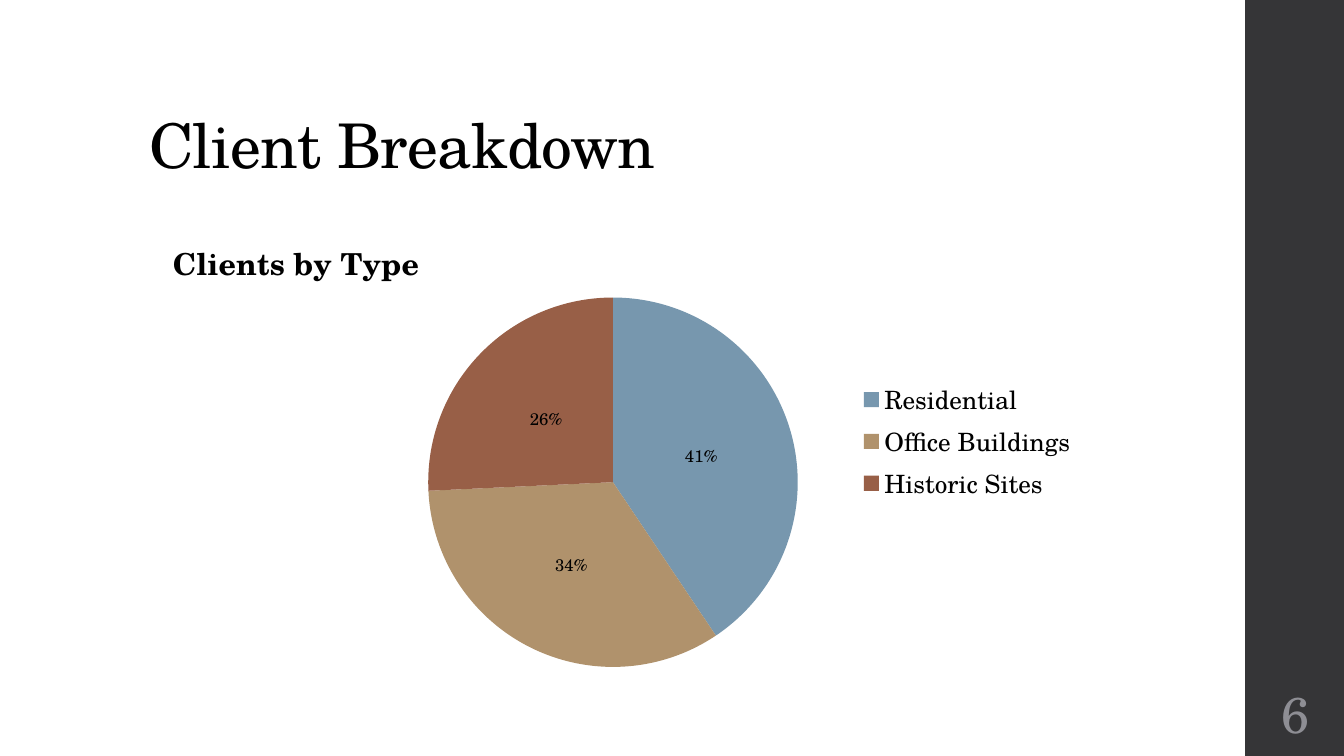
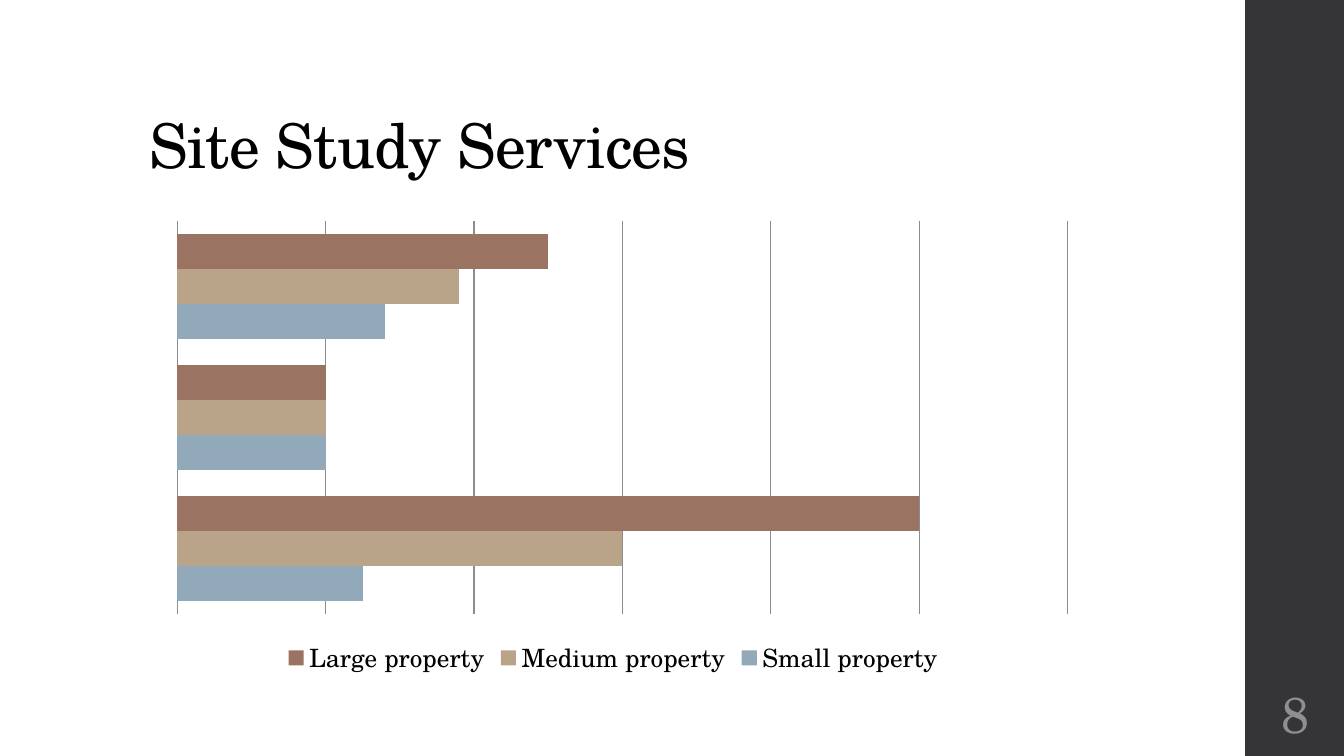
from lxml import etree
from pptx import Presentation
from pptx.chart.data import CategoryChartData
from pptx.dml.color import RGBColor
from pptx.enum.chart import XL_CHART_TYPE, XL_LABEL_POSITION, XL_LEGEND_POSITION
from pptx.enum.shapes import MSO_SHAPE
from pptx.enum.text import MSO_ANCHOR, PP_ALIGN
from pptx.oxml.ns import qn
from pptx.util import Inches, Pt

FONT = "TeX Gyre Schola"
BLACK = RGBColor(0x00, 0x00, 0x00)
BAND = RGBColor(0x35, 0x35, 0x37)
PAGE_GRAY = RGBColor(0x8E, 0x8E, 0x94)
GRID_GRAY = RGBColor(0x8C, 0x8C, 0x8C)
BLUE = RGBColor(0x77, 0x97, 0xAE)
TAN = RGBColor(0xB0, 0x92, 0x6C)
RUST = RGBColor(0x98, 0x5F, 0x47)
SOFT_BLUE = RGBColor(0x92, 0xA9, 0xB9)
SOFT_TAN = RGBColor(0xB9, 0xA4, 0x89)
SOFT_RUST = RGBColor(0x9B, 0x73, 0x62)

CONTENT_LEFT = 1.38
BAND_LEFT, BAND_WIDTH, SLIDE_HEIGHT = 12.35, 1, 7.5
PRICE_FORMAT = r"\$#,##0_);[Red]\(\$#,##0\)"


def style_font(font, size, color=BLACK, bold=False):
    font.name = FONT
    font.size = Pt(size)
    font.color.rgb = color
    font.bold = bold


def add_text(slide, text, box, size, color, anchor):
    """Add a one-line text box and return its frame, paragraph and run."""
    frame = slide.shapes.add_textbox(*map(Inches, box)).text_frame
    frame.word_wrap = True
    frame.vertical_anchor = anchor
    paragraph = frame.paragraphs[0]
    run = paragraph.add_run()
    run.text = text
    style_font(run.font, size, color)
    return frame, paragraph, run


def add_title(slide, text):
    box = (CONTENT_LEFT, 0.4, 10.6, 1.45)
    _, paragraph, run = add_text(slide, text, box, 44, BLACK, MSO_ANCHOR.BOTTOM)
    paragraph.line_spacing = 0.9
    run._r.get_or_add_rPr().set("spc", "-50")


def add_band(slide):
    band = slide.shapes.add_shape(
        MSO_SHAPE.RECTANGLE,
        Inches(BAND_LEFT), 0, Inches(BAND_WIDTH), Inches(SLIDE_HEIGHT))
    band.shadow.inherit = False
    band.fill.solid()
    band.fill.fore_color.rgb = BAND
    band.line.fill.background()


def add_page_number(slide, number):
    box = (BAND_LEFT, 6.75, BAND_WIDTH, 0.65)
    frame, paragraph, _ = add_text(
        slide, str(number), box, 36, PAGE_GRAY, MSO_ANCHOR.MIDDLE)
    frame.margin_left = frame.margin_right = Inches(0.05)
    frame.margin_top = frame.margin_bottom = Inches(0.05)
    paragraph.alignment = PP_ALIGN.CENTER


def add_content_slide(prs, title, number):
    slide = prs.slides.add_slide(prs.slide_layouts[6])
    add_band(slide)
    add_title(slide, title)
    add_page_number(slide, number)
    return slide


def place(parent, **settings):
    """Give a chart title or plot area a manual layout."""
    layout = parent.find(qn("c:layout"))
    if layout is None:
        layout = etree.Element(qn("c:layout"))
        parent.insert(0, layout)
    manual = etree.SubElement(layout, qn("c:manualLayout"))
    for tag, value in settings.items():
        etree.SubElement(manual, qn(f"c:{tag}")).set("val", str(value))


def place_plot(chart, x, y, w, h):
    plot_area = chart._chartSpace.chart.plotArea
    place(plot_area, layoutTarget="inner", xMode="edge", yMode="edge",
          x=x, y=y, w=w, h=h)


def fill_with(part, color):
    part.format.fill.solid()
    part.format.fill.fore_color.rgb = color


def add_chart(slide, kind, categories, series, legend_position):
    data = CategoryChartData()
    data.categories = categories
    for name, values in series:
        data.add_series(name, values)
    box = map(Inches, (CONTENT_LEFT, 2, 9.4, 4.76))
    chart = slide.shapes.add_chart(kind, *box, data).chart
    style_font(chart.font, 18)
    chart.has_title = False
    chart.has_legend = True
    chart.legend.position = legend_position
    chart.legend.include_in_layout = True
    style_font(chart.legend.font, 18)
    return chart


def add_chart_title(chart, text, x, y):
    chart.has_title = True
    title = chart.chart_title
    run = title.text_frame.paragraphs[0].add_run()
    run.text = text
    style_font(run.font, 21.6, bold=True)
    place(title._element, xMode="edge", yMode="edge", x=x, y=y)
    title._element.find(qn("c:overlay")).set("val", "1")


def add_client_pie(slide):
    heading = "Clients by Type"
    clients = [("Residential", 41, BLUE),
               ("Office Buildings", 34, TAN),
               ("Historic Sites", 26, RUST)]
    names, shares, colors = zip(*clients)
    chart = add_chart(slide, XL_CHART_TYPE.PIE, names, [(heading, shares)],
                      XL_LEGEND_POSITION.RIGHT)
    add_chart_title(chart, heading, 0.03, 0.06)
    place_plot(chart, 0.3, 0.2, 0.4, 0.77)

    pie = chart.plots[0]
    pie.vary_by_categories = True
    for index, color in enumerate(colors):
        fill_with(pie.series[0].points[index], color)
    pie.has_data_labels = True
    labels = pie.data_labels
    labels.show_percentage = True
    labels.show_value = False
    labels.number_format = "0%"
    labels.number_format_is_linked = False
    labels.position = XL_LABEL_POSITION.CENTER
    style_font(labels.font, 12)


def add_service_bars(slide):
    services = [("Small property", (25, 20, 28), SOFT_BLUE),
                ("Medium property", (60, 20, 38), SOFT_TAN),
                ("Large property", (100, 20, 50), SOFT_RUST)]
    chart = add_chart(slide, XL_CHART_TYPE.BAR_CLUSTERED, ("1", "2", "3"),
                      [service[:2] for service in services],
                      XL_LEGEND_POSITION.BOTTOM)
    place_plot(chart, 0.04, 0.04, 0.94, 0.82)

    bars = chart.plots[0]
    bars.gap_width = 75
    bars.vary_by_categories = False
    for series, (_, _, color) in zip(bars.series, services):
        fill_with(series, color)

    chart.category_axis.visible = False
    prices = chart.value_axis
    prices.visible = False
    prices.minimum_scale, prices.maximum_scale = 0, 120
    prices.major_unit = 20
    prices.tick_labels.number_format = PRICE_FORMAT
    prices.tick_labels.number_format_is_linked = False
    prices.has_major_gridlines = True
    grid = prices.major_gridlines.format.line
    grid.color.rgb = GRID_GRAY
    grid.width = Pt(0.75)


def main():
    prs = Presentation()
    prs.slide_width = Inches(13.33)
    prs.slide_height = Inches(SLIDE_HEIGHT)
    add_client_pie(add_content_slide(prs, "Client Breakdown", 6))
    add_service_bars(add_content_slide(prs, "Site Study Services", 8))
    prs.save("out.pptx")


if __name__ == "__main__":
    main()
